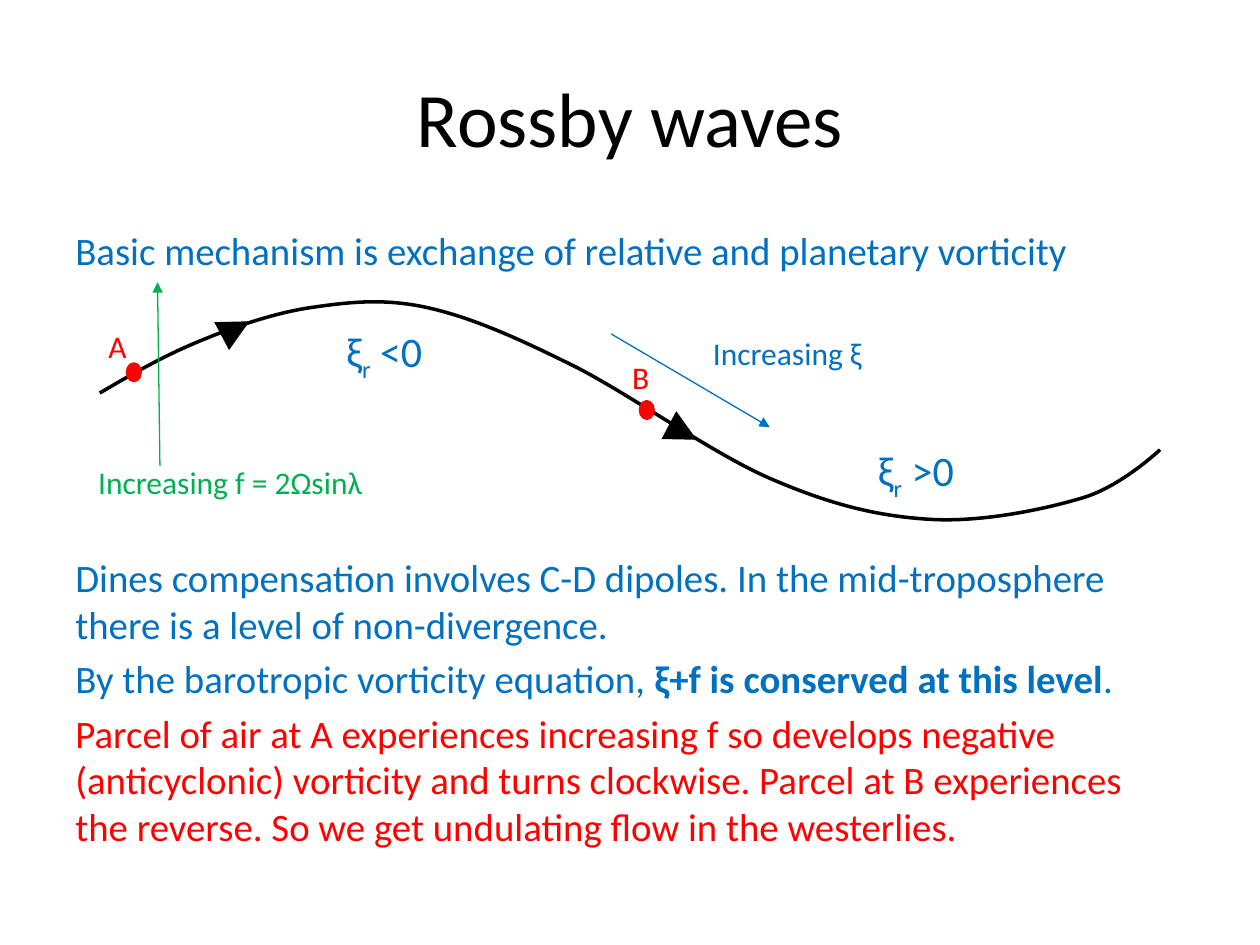
from lxml.etree import SubElement
from pptx import Presentation
from pptx.dml.color import RGBColor
from pptx.enum.shapes import MSO_CONNECTOR, MSO_SHAPE
from pptx.enum.text import MSO_ANCHOR, PP_ALIGN
from pptx.oxml.ns import qn
from pptx.util import Pt

COLORS = {"black": "000000", "blue": "0070C0", "green": "00B050", "red": "FF0000"}
BODY_SIZE = 22.2

deck = Presentation()
deck.slide_width, deck.slide_height = Pt(720), Pt(540)
page = deck.slides.add_slide(deck.slide_layouts[6])


def color(name):
    return RGBColor.from_string(COLORS[name])


def add_text(left, top, width, height, size, paragraphs):
    box = page.shapes.add_textbox(Pt(left), Pt(top), Pt(width), Pt(height))
    frame = box.text_frame
    frame.word_wrap = True
    for index, (color_name, runs) in enumerate(paragraphs):
        para = frame.paragraphs[0] if index == 0 else frame.add_paragraph()
        para.font.name = "Calibri"
        para.font.size = Pt(size)
        para.font.color.rgb = color(color_name)
        for text, style in runs:
            span = para.add_run()
            span.text = text
            if style == "bold":
                span.font.bold = True
            elif style == "subscript":
                span._r.get_or_add_rPr().set("baseline", "-25000")
    return frame


wave_points = [
    (57, 224.6),
    (74.2, 214.6), (91.4, 204.5), (111.3, 196.1),
    (131.2, 187.7), (155.4, 179.1), (177.4, 175.8),
    (199.4, 172.6), (219.3, 170.3), (244.2, 175.8),
    (269.1, 181.4), (293.9, 192.3), (326.6, 208.5),
    (359.3, 224.7), (406.8, 259.2), (440.9, 273.8),
    (475, 288.5), (501.6, 295), (531.4, 296.8),
    (561.2, 298.6), (597.2, 291), (619, 284.4),
    (640.9, 277.8), (662.9, 257), (662.9, 257),
]
wave_emu = [(Pt(x), Pt(y)) for x, y in wave_points]
builder = page.shapes.build_freeform(*wave_emu[0])
builder.add_line_segments(wave_emu[1:], close=False)
wave = builder.convert_to_shape()
segments = list(wave._element.iter(qn("a:lnTo")))
outline = segments[0].getparent()
for index in range(0, len(segments), 3):
    curve = SubElement(outline, qn("a:cubicBezTo"))
    for segment in segments[index:index + 3]:
        curve.append(segment[0])
        outline.remove(segment)
wave.shadow.inherit = False
wave.fill.background()
wave.line.color.rgb = color("black")
wave.line.width = Pt(2)

title = add_text(36, 21.6, 648, 90, 44, [("black", [("Rossby waves", None)])])
title.vertical_anchor = MSO_ANCHOR.MIDDLE
title.paragraphs[0].alignment = PP_ALIGN.CENTER

body = add_text(36, 126, 648, 356.4, BODY_SIZE, [
    ("blue", [("Basic mechanism is exchange of relative and planetary vorticity", None)]),
    ("blue", [("Dines compensation involves C-D dipoles. In the mid-troposphere "
               "there is a level of non-divergence.", None)]),
    ("blue", [("By the barotropic vorticity equation, ", None),
              ("ξ+f is conserved at this level", "bold"), (".", None)]),
    ("red", [("Parcel of air at A experiences increasing f so develops negative "
              "(anticyclonic) vorticity and turns clockwise. Parcel at B experiences "
              "the reverse. So we get undulating flow in the westerlies.", None)]),
])
body.margin_right = Pt(12)
for para, space in zip(body.paragraphs[1:], (160.2, 4.5, 4.5)):
    para.space_before = Pt(space)

arrows = [
    (133.2, 188.6, 142.6, 183.6, "black", 6),
    (384.5, 244.1, 398.2, 251.3, "black", 6),
    (91.4, 266.4, 90, 161.3, "green", 0.75),
    (349.2, 190.8, 439.9, 244.1, "blue", 0.75),
]
for x1, y1, x2, y2, color_name, width in arrows:
    arrow = page.shapes.add_connector(
        MSO_CONNECTOR.STRAIGHT, Pt(x1), Pt(y1), Pt(x2), Pt(y2))
    arrow.line.color.rgb = color(color_name)
    arrow.line.width = Pt(width)
    SubElement(arrow.line._get_or_add_ln(), qn("a:tailEnd"), type="triangle")
    SubElement(arrow._element.spPr, qn("a:effectLst"))

for left, top in [(72.9, 208), (366, 229.6)]:
    parcel = page.shapes.add_shape(MSO_SHAPE.OVAL, Pt(left), Pt(top), Pt(7.2), Pt(9.4))
    parcel.shadow.inherit = False
    parcel.fill.solid()
    parcel.fill.fore_color.rgb = color("red")
    parcel.line.color.rgb = color("red")
    parcel.line.width = Pt(2)

labels = [
    (49, 261, 219.6, 29, 18, "green", [("Increasing f = 2Ωsinλ", None)]),
    (400.3, 187.2, 101.5, 29, 18, "blue", [("Increasing ξ", None)]),
    (54.9, 183.2, 21.6, 29, 18, "red", [("A", None)]),
    (354.2, 201.2, 21.6, 29, 18, "red", [("B", None)]),
    (190.8, 182.5, 80, 36, 24, "blue", [("ξ", None), ("r", "subscript"), (" <0", None)]),
    (494.6, 250.6, 80, 36, 24, "blue", [("ξ", None), ("r", "subscript"), (" >0", None)]),
]
for left, top, width, height, size, color_name, runs in labels:
    add_text(left, top, width, height, size, [(color_name, runs)])

deck.save("out.pptx")
